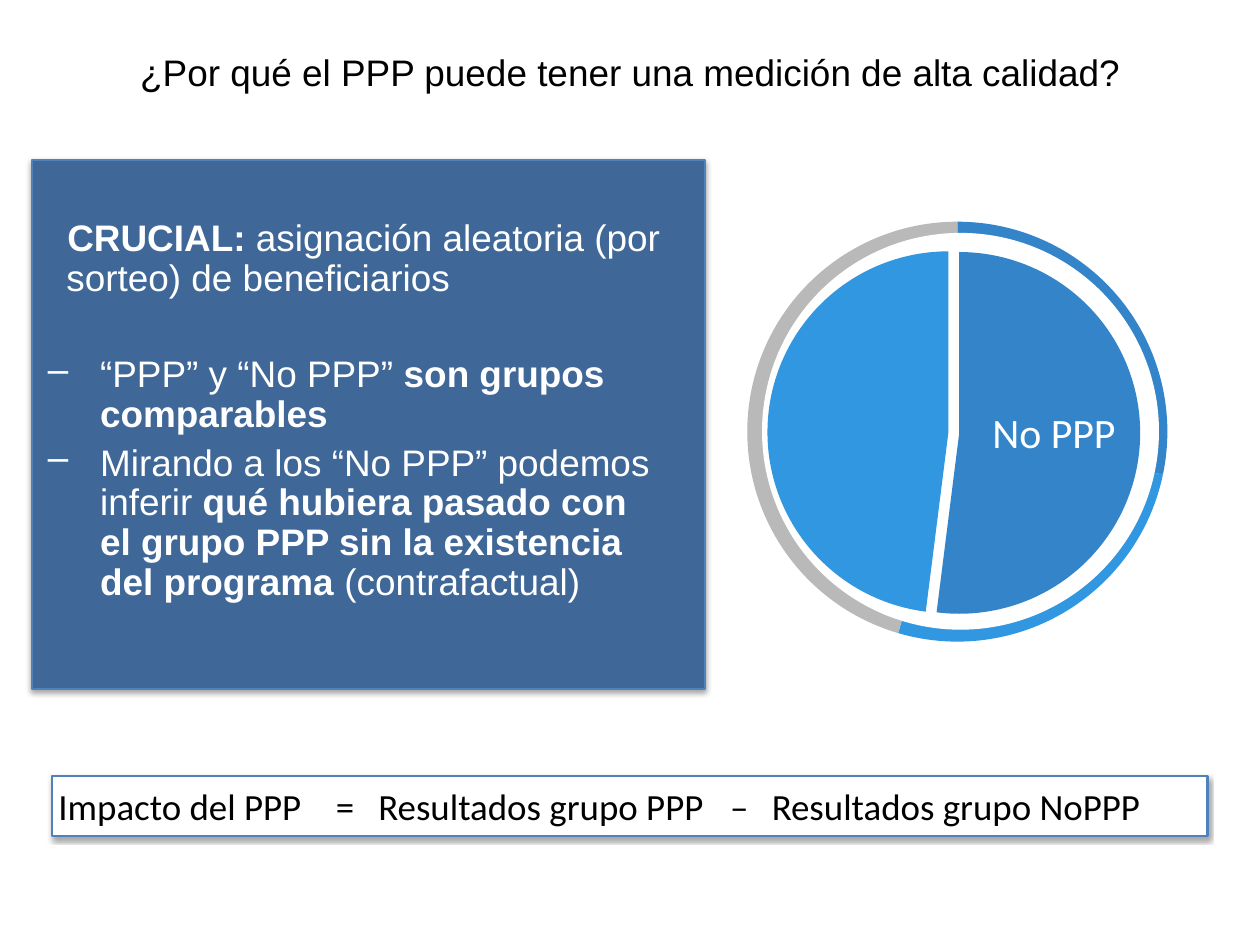
from dataclasses import dataclass

from lxml import etree
from pptx import Presentation
from pptx import util as u
from pptx.chart import data as chart_data
from pptx.dml.color import RGBColor
from pptx.enum import chart as charts, shapes, text
from pptx.oxml import parse_xml
from pptx.oxml.ns import nsdecls, qn


@dataclass(frozen=True)
class Theme:
    panel: str = "3F6797"
    border: str = "4F81BD"
    deep_blue: str = "3484C9"
    bright_blue: str = "3197E0"
    grey: str = "B9B9B9"
    white: str = "FFFFFF"
    black: str = "000000"
    heading_font: str = "Arial"
    body_font: str = "Calibri"
    text_size: int = 30
    label_size: int = 34
    chart_size: int = 10


THEME = Theme()


def rgb(value):
    return RGBColor.from_string(value)


def place(left, top, width, height):
    return [u.Inches(value) for value in (left, top, width, height)]


def set_font(font, name, size, color):
    font.name, font.size = name, u.Pt(size)
    font.color.rgb = rgb(color)


def prepare_frame(shape, wrap=True, anchor=text.MSO_ANCHOR.TOP):
    frame = shape.text_frame
    frame.word_wrap = wrap
    frame.vertical_anchor = anchor
    frame.margin_left = frame.margin_right = u.Inches(0.07)
    frame.margin_top = frame.margin_bottom = u.Inches(0.07)
    return frame


def add_label(page, area, wording, font, size, color, align=text.PP_ALIGN.LEFT, wrap=True):
    box = page.shapes.add_textbox(*place(*area))
    para = prepare_frame(box, wrap, text.MSO_ANCHOR.MIDDLE).paragraphs[0]
    para.text = wording
    para.alignment = align
    set_font(para.font, font, size, color)


def add_panel(page, area, fill):
    """Bordered rectangle with a soft shadow below it."""
    box = page.shapes.add_shape(shapes.MSO_SHAPE.RECTANGLE, *place(*area))
    box.fill.solid()
    box.fill.fore_color.rgb = rgb(fill)
    box.line.color.rgb = rgb(THEME.border)
    box.line.width = u.Pt(2)
    box.shadow.inherit = False
    effects = box._element.spPr.find(qn("a:effectLst"))
    effects.append(parse_xml(
        f'<a:outerShdw {nsdecls("a")} blurRad="{u.Pt(4)}" dist="{u.Pt(2)}" dir="5400000" '
        f'rotWithShape="0"><a:srgbClr val="{THEME.black}"><a:alpha val="35000"/></a:srgbClr>'
        '</a:outerShdw>'))
    return box


def add_argument(frame, para, spans, before, margin, indent, dash=False):
    """Paragraph of (wording, bold) spans, with a dash bullet if asked."""
    para.line_spacing = 0.9
    para.space_before = u.Pt(before)
    set_font(para.font, THEME.heading_font, THEME.text_size, THEME.white)
    props = para._p.get_or_add_pPr()
    props.set("marL", str(u.Inches(margin)))
    props.set("indent", str(u.Inches(indent)))
    if dash:
        para.level = 1
        bullet = parse_xml(f'<a:buChar {nsdecls("a")} char="–"/>')
        props.find(qn("a:defRPr")).addprevious(bullet)
    for wording, bold in spans:
        span = para.add_run()
        span.text = wording
        span.font.bold = bold


def add_arguments(page):
    box = page.shapes.add_textbox(*place(-0.03, 2.41, 7.63, 4.92))
    frame = prepare_frame(box)
    add_argument(frame, frame.paragraphs[0], [
        ("CRUCIAL: ", True),
        ("asignación aleatoria (por sorteo) de beneficiarios", False),
    ], 7, 0.71, 0.01)
    points = [
        (46, [("“PPP” y “No PPP” ", False), ("son grupos comparables", True)]),
        (7, [("Mirando a los “No PPP” podemos inferir ", False),
             ("qué hubiera pasado con el grupo PPP sin la existencia del programa ", True),
             ("(contrafactual)", False)]),
    ]
    for before, spans in points:
        add_argument(frame, frame.add_paragraph(), spans, before, 1.09, -0.59, dash=True)


def add_formula(page):
    box = add_panel(page, (0.59, 8.76, 13.04, 0.68), THEME.white)
    para = prepare_frame(box, anchor=text.MSO_ANCHOR.MIDDLE).paragraphs[0]
    para.alignment = text.PP_ALIGN.LEFT
    set_font(para.font, THEME.body_font, THEME.text_size, THEME.black)
    para.add_run().text = "\t".join(
        ["Impacto del PPP", "=", "Resultados grupo PPP", "–", "Resultados grupo NoPPP"])
    # Tab stops separate the terms and the operators
    stops = etree.Element(qn("a:tabLst"))
    for stop in (3.13, 3.61, 7.58, 8.05):
        etree.SubElement(stops, qn("a:tab"), pos=str(u.Inches(stop)), algn="l")
    para._p.get_or_add_pPr().find(qn("a:defRPr")).addprevious(stops)


def add_pie(page, area, values, colors, explosion=0):
    table = chart_data.CategoryChartData()
    table.categories = [str(number + 1) for number in range(len(values))]
    table.add_series("Series 1", values)
    frame = page.shapes.add_chart(charts.XL_CHART_TYPE.PIE, *place(*area), table)
    chart = frame.chart
    chart.has_title = chart.has_legend = False
    set_font(chart.font, THEME.body_font, THEME.chart_size, THEME.black)
    plot = chart.plots[0]
    plot.vary_by_categories = True
    series = plot.series[0]
    for index, color in enumerate(colors):
        fill = series.points[index].format.fill
        fill.solid()
        fill.fore_color.rgb = rgb(color)
    if explosion:
        series._element.find(qn("c:dPt")).addprevious(
            parse_xml(f'<c:explosion {nsdecls("c")} val="{explosion}"/>'))
    # Let the pie fill its frame
    plot_area = chart._chartSpace.chart.plotArea
    for layout in plot_area.findall(qn("c:layout")):
        plot_area.remove(layout)
    plot_area.insert(0, parse_xml(
        f'<c:layout {nsdecls("c")}><c:manualLayout><c:layoutTarget val="inner"/>'
        '<c:xMode val="edge"/><c:yMode val="edge"/><c:x val="0.005"/><c:y val="0.005"/>'
        '<c:w val="0.99"/><c:h val="0.99"/></c:manualLayout></c:layout>'))


def add_disc(page, area):
    disc = page.shapes.add_shape(shapes.MSO_SHAPE.OVAL, *place(*area))
    disc.shadow.inherit = False
    disc.fill.solid()
    disc.fill.fore_color.rgb = rgb(THEME.white)
    disc.line.fill.background()


def main():
    deck = Presentation()
    deck.slide_width, deck.slide_height = u.Inches(14.22), u.Inches(10.67)
    page = deck.slides.add_slide(deck.slide_layouts[6])

    # Argument panel and title
    add_panel(page, (0.36, 1.81, 7.6, 5.97), THEME.panel)
    add_label(page, (0.2, 0.22, 13.83, 1.18),
              "¿Por qué el PPP puede tener una medición de alta calidad?",
              THEME.heading_font, THEME.text_size, THEME.black, text.PP_ALIGN.CENTER)
    add_arguments(page)

    # Impact formula
    add_formula(page)

    # Ring around the pie of the two groups
    blues = [THEME.deep_blue, THEME.bright_blue]
    add_pie(page, (8.41, 2.48, 4.79, 4.79), (28, 26, 45), blues + [THEME.grey])
    add_disc(page, (8.6, 2.63, 4.48, 4.48))
    add_pie(page, (8.64, 2.76, 4.25, 4.25), (52, 48), blues, explosion=3)
    add_label(page, (11.13, 4.52, 1.55, 0.71), "No PPP",
              THEME.body_font, THEME.label_size, THEME.white, wrap=False)

    deck.save("out.pptx")


if __name__ == "__main__":
    main()
